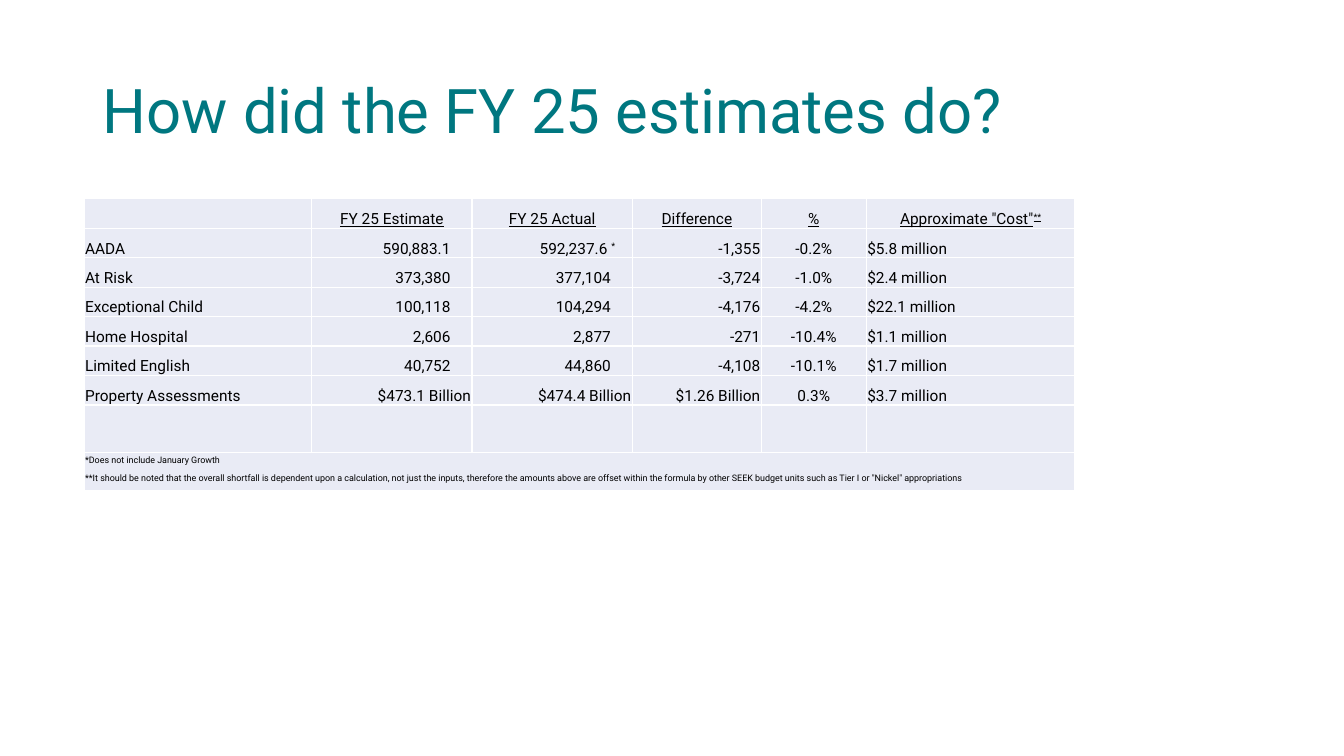
from dataclasses import dataclass

from lxml import etree
from pptx import Presentation
from pptx.dml.color import RGBColor
from pptx.enum.text import MSO_ANCHOR, PP_ALIGN
from pptx.oxml.ns import qn
from pptx.slide import Slide
from pptx.table import _Cell
from pptx.text.text import _Paragraph
from pptx.util import Inches, Pt

LEFT, MID, RIGHT = PP_ALIGN.LEFT, PP_ALIGN.CENTER, PP_ALIGN.RIGHT
MIDDLE, BOTTOM = MSO_ANCHOR.MIDDLE, MSO_ANCHOR.BOTTOM

TEAL = RGBColor(0x00, 0x77, 0x80)
BLACK = RGBColor(0x00, 0x00, 0x00)
WHITE = RGBColor(0xFF, 0xFF, 0xFF)
PALE = RGBColor(0xE9, 0xEB, 0xF5)
FONT = "Roboto"
BODY = 11

WIDE, HIGH = Inches(13.33), Inches(7.5)

# Percent of the slide's width and height
COLS = [16.95, 11.93, 11.93, 9.6, 7.8, 15.53]
ROWS = [4] + [3.9] * 6 + [6.27, 3.73]
EDGE = 0.08
PAD = 1.6
STAR_PAD = 1.28

HEADS = ["", "FY 25 Estimate", "FY 25 Actual", "Difference", "%",
         'Approximate "Cost"']
NOTES = [
    "*Does not include January Growth",
    "**It should be noted that the overall shortfall is dependent upon a "
    "calculation, not just the inputs, therefore the amounts above are offset "
    "within the formula by other SEEK budget units such as Tier I or "
    '"Nickel" appropriations',
]


@dataclass
class Item:
    name: str
    guess: str
    real: str
    gap: str
    rate: str
    cost: str
    mark: str = ""
    pad: float = PAD


ITEMS = [
    Item("AADA", "590,883.1", "592,237.6 ", "-1,355", "-0.2%",
         "$5.8 million", mark="*"),
    Item("At Risk", "373,380", "377,104", "-3,724", "-1.0%", "$2.4 million"),
    Item("Exceptional Child", "100,118", "104,294", "-4,176", "-4.2%",
         "$22.1 million"),
    Item("Home Hospital", "2,606", "2,877", "-271", "-10.4%", "$1.1 million"),
    Item("Limited English", "40,752", "44,860", "-4,108", "-10.1%",
         "$1.7 million"),
    Item("Property Assessments", "$473.1 Billion", "$474.4 Billion",
         "$1.26 Billion", "0.3%", "$3.7 million", pad=EDGE),
]


def across(share: float) -> int:
    return round(WIDE * share / 100)


def down(share: float) -> int:
    return round(HIGH * share / 100)


def write(para: _Paragraph, text: str, size: float = BODY,
          color: RGBColor = BLACK, under: bool = False,
          high: bool = False) -> None:
    """Add one run; high makes it superscript."""
    run = para.add_run()
    run.text = text
    font = run.font
    font.name, font.size, font.bold = FONT, Pt(size), False
    font.color.rgb = color
    font.underline = under
    if high:
        run._r.get_or_add_rPr().set("baseline", "30000")


def border(cell: _Cell) -> None:
    props = cell._tc.get_or_add_tcPr()
    for spot, side in enumerate(("lnL", "lnR", "lnT", "lnB")):
        line = etree.Element(qn(f"a:{side}"), w=str(Pt(1)))
        fill = etree.SubElement(line, qn("a:solidFill"))
        etree.SubElement(fill, qn("a:srgbClr"), val=str(WHITE))
        props.insert(spot, line)


def dress(cell: _Cell) -> None:
    """Give a cell its fill, borders, margins and empty-line size."""
    cell.fill.solid()
    cell.fill.fore_color.rgb = PALE
    border(cell)
    cell.margin_left = cell.margin_right = across(EDGE)
    cell.margin_top, cell.margin_bottom = down(0.13), 0
    cell.vertical_anchor = BOTTOM
    para = cell.text_frame.paragraphs[0]._p
    etree.SubElement(para, qn("a:endParaRPr"), sz=str(BODY * 100))


def put(cell: _Cell, text: str, align: PP_ALIGN, mark: str = "",
        under: bool = False, pad: float = EDGE) -> None:
    """Write a cell's text and its raised mark."""
    para = cell.text_frame.paragraphs[0]
    para.alignment = align
    cell.margin_right = across(pad)
    write(para, text, under=under)
    if mark:
        write(para, mark, under=under, high=True)


def add_title(slide: Slide) -> None:
    box = slide.shapes.add_textbox(across(6.9), down(5.33),
                                   across(86.27), down(19.33))
    frame = box.text_frame
    frame.word_wrap = True
    frame.vertical_anchor = MIDDLE
    para = frame.paragraphs[0]
    para.line_spacing = 0.9
    write(para, "How did the FY 25 estimates do?", 44, TEAL)


def add_grid(slide: Slide) -> None:
    frame = slide.shapes.add_table(len(ROWS), len(COLS), across(6.25),
                                   down(26.2), across(sum(COLS)),
                                   down(sum(ROWS)))
    table = frame.table
    table.first_row = table.horz_banding = False
    for col, share in zip(table.columns, COLS):
        col.width = across(share)
    for row, share in zip(table.rows, ROWS):
        row.height = down(share)
    for cell in table.iter_cells():
        dress(cell)

    for col, head in enumerate(HEADS):
        if head:
            mark = "**" if col == len(HEADS) - 1 else ""
            put(table.cell(0, col), head, MID, mark, under=True)

    for row, item in enumerate(ITEMS, 1):
        cells = table.rows[row].cells
        put(cells[0], item.name, LEFT)
        put(cells[1], item.guess, RIGHT, pad=item.pad)
        put(cells[2], item.real, RIGHT, item.mark,
            pad=STAR_PAD if item.mark else item.pad)
        put(cells[3], item.gap, RIGHT)
        put(cells[4], item.rate, MID)
        put(cells[5], item.cost, LEFT)

    last = len(ROWS) - 1
    foot = table.cell(last, 0)
    foot.merge(table.cell(last, len(COLS) - 1))
    foot.vertical_anchor = MIDDLE
    body = foot.text_frame
    for spot, note in enumerate(NOTES):
        para = body.add_paragraph() if spot else body.paragraphs[0]
        write(para, note, high=True)


def main() -> None:
    deck = Presentation()
    deck.slide_width, deck.slide_height = WIDE, HIGH
    slide = deck.slides.add_slide(deck.slide_layouts[6])
    add_title(slide)
    add_grid(slide)
    deck.save("out.pptx")


if __name__ == "__main__":
    main()
